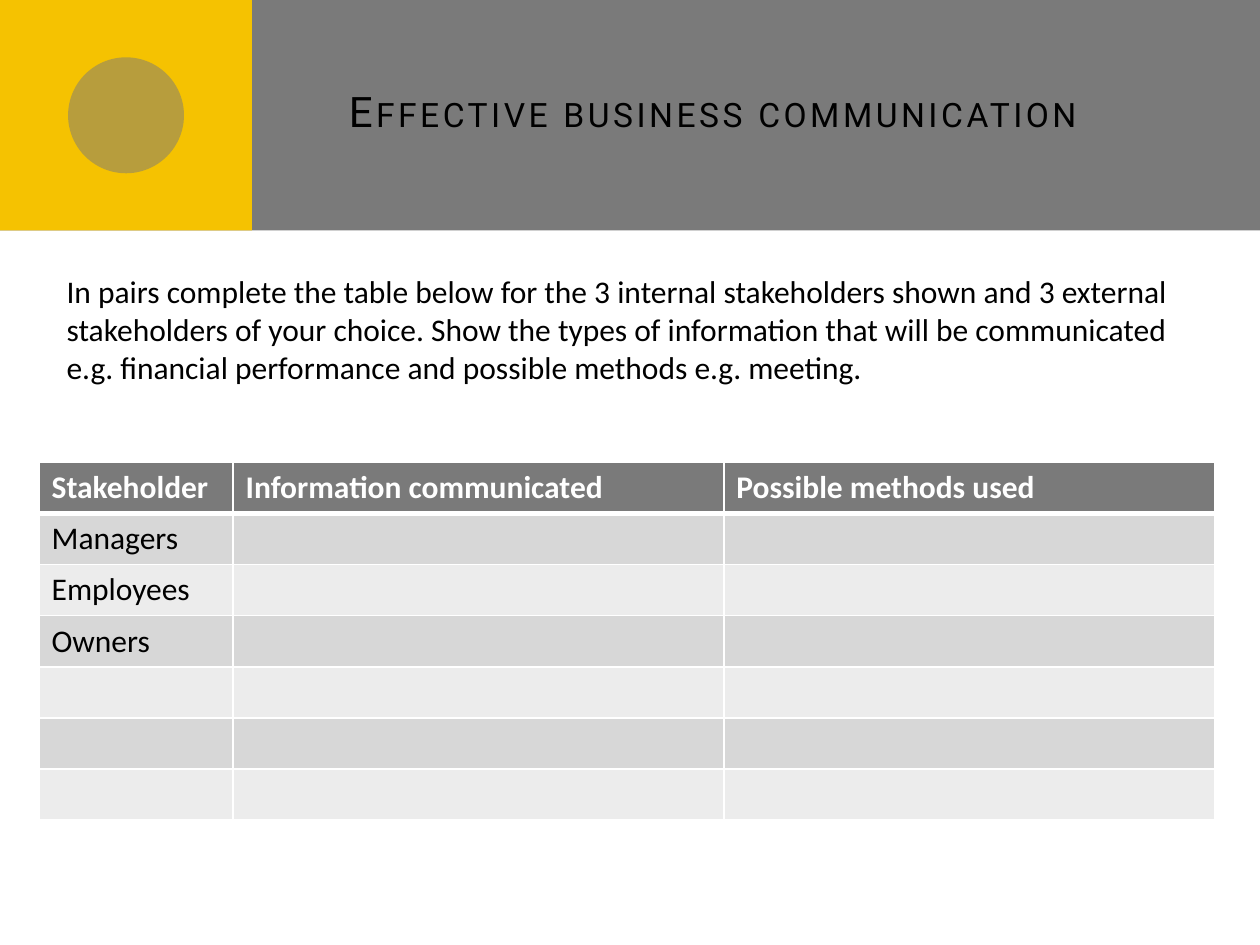
from lxml import etree
from pptx import Presentation, util as u
from pptx.dml.color import RGBColor
from pptx.enum import shapes, text
from pptx.oxml.ns import qn

COLORS = {
    "grey": "7A7A7A",
    "yellow": "F5C201",
    "black": "000000",
    "white": "FFFFFF",
    "dark_band": "D7D7D7",
    "light_band": "ECECEC",
}
STAKEHOLDER_ROWS = [
    ["Stakeholder", "Information communicated", "Possible methods used"],
    ["Managers", "", ""],
    ["Employees", "", ""],
    ["Owners", "", ""],
    ["", "", ""],
    ["", "", ""],
    ["", "", ""],
]


def rgb(name):
    return RGBColor.from_string(COLORS[name])


def write_text(frame, words, size=18, font="Calibri", color="black", bold=False,
               align=text.PP_ALIGN.LEFT, anchor=None, spacing=0, small_caps=False):
    frame.word_wrap = True
    if anchor is not None:
        frame.vertical_anchor = anchor
    paragraph = frame.paragraphs[0]
    paragraph.alignment = align
    run = paragraph.add_run()
    run.text = words
    run.font.size = u.Pt(size)
    run.font.name = font
    run.font.bold = bold
    run.font.color.rgb = rgb(color)
    properties = run.font._element
    if spacing:
        properties.set("spc", str(int(spacing * 100)))
    if small_caps:
        properties.set("cap", "small")


def add_block(slide, preset, left, top, width, height, color, opacity=100):
    block = slide.shapes.add_shape(preset, left, top, width, height)
    block.shadow.inherit = False
    block.fill.solid()
    block.fill.fore_color.rgb = rgb(color)
    block.line.fill.background()
    if opacity < 100:
        fill_color = block._element.spPr.find(qn("a:solidFill"))[0]
        etree.SubElement(fill_color, qn("a:alpha")).set("val", str(opacity * 1000))


def add_header(slide, left, top, width, height):
    badge_width = u.Inches(2)
    dot = u.Inches(0.92)
    rectangle = shapes.MSO_SHAPE.RECTANGLE
    add_block(slide, rectangle, left, top, width, height, "grey")
    add_block(slide, rectangle, left, top, badge_width, height, "yellow")
    add_block(slide, shapes.MSO_SHAPE.OVAL, left + (badge_width - dot) // 2,
              top + (height - dot) // 2, dot, dot, "grey", opacity=50)
    title = slide.shapes.add_textbox(left + u.Inches(2.67), top + u.Inches(0.25),
                                     u.Inches(6.83), u.Inches(1.25))
    write_text(title.text_frame, "Effective business communication", size=24,
               font="Roboto", align=text.PP_ALIGN.RIGHT,
               anchor=text.MSO_ANCHOR.MIDDLE, spacing=2, small_caps=True)


def add_task(slide, left, top, width, height):
    task = slide.shapes.add_textbox(left, top, width, height)
    write_text(task.text_frame,
               "In pairs complete the table below for the 3 internal stakeholders "
               "shown and 3 external stakeholders of your choice. Show the types of "
               "information that will be communicated e.g. financial performance and "
               "possible methods e.g. meeting.")


def set_borders(cell, **widths):
    """Draw white borders, given in points by side: L, R, T and B."""
    properties = cell._tc.get_or_add_tcPr()
    for position, side in enumerate("LRTB"):
        border = etree.Element(qn(f"a:ln{side}"), w=str(u.Pt(widths.get(side, 1))))
        fill = etree.SubElement(border, qn("a:solidFill"))
        etree.SubElement(fill, qn("a:srgbClr")).set("val", COLORS["white"])
        properties.insert(position, border)


def add_stakeholder_table(slide, left, top, width, height):
    row_count, column_count = len(STAKEHOLDER_ROWS), len(STAKEHOLDER_ROWS[0])
    table = slide.shapes.add_table(row_count, column_count, left, top,
                                   width, height).table
    first_width = u.Inches(1.54)
    table.columns[0].width = first_width
    for index in range(1, column_count):
        table.columns[index].width = (width - first_width) // (column_count - 1)

    for row, labels in enumerate(STAKEHOLDER_ROWS):
        header = row == 0
        band = "grey" if header else "dark_band" if row % 2 else "light_band"
        for column, label in enumerate(labels):
            cell = table.cell(row, column)
            cell.fill.solid()
            cell.fill.fore_color.rgb = rgb(band)
            set_borders(cell, B=3 if header else 1, T=3 if row == 1 else 1)
            if label:
                write_text(cell.text_frame, label, bold=header,
                           color="white" if header else "black")


def main():
    deck = Presentation()
    deck.slide_width, deck.slide_height = u.Inches(10), u.Inches(7.5)
    slide = deck.slides.add_slide(deck.slide_layouts[6])
    add_header(slide, 0, 0, deck.slide_width, u.Inches(1.83))
    add_stakeholder_table(slide, u.Inches(0.31), u.Inches(3.67),
                          u.Inches(9.33), u.Inches(2.84))
    add_task(slide, u.Inches(0.43), u.Inches(2.11), u.Inches(9.21), u.Inches(1.01))
    deck.save("out.pptx")


if __name__ == "__main__":
    main()
